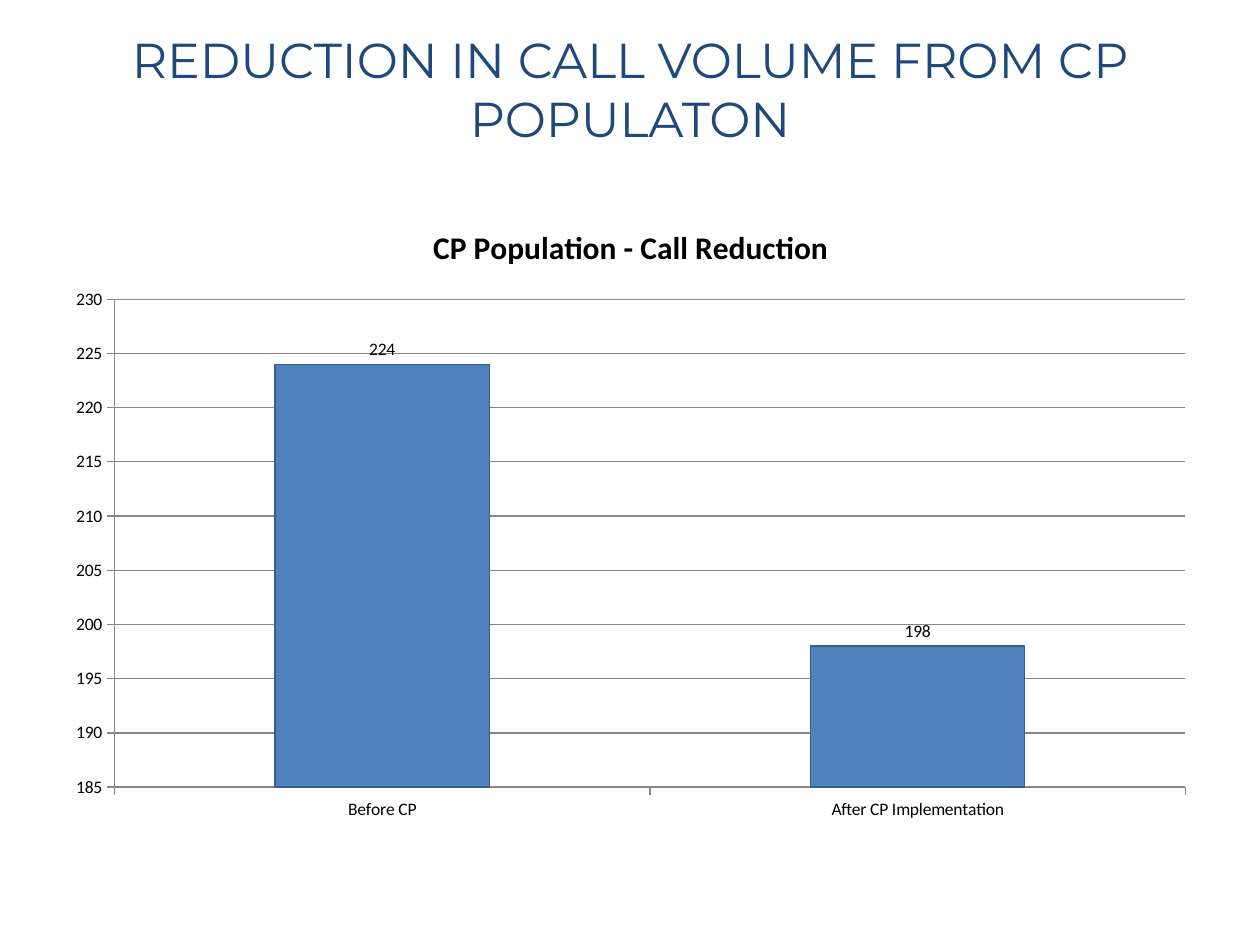
import pptx
import pptx.util
import pptx.chart.data
import pptx.dml.color
import pptx.enum.chart
import pptx.enum.text

Cm, Pt = pptx.util.Cm, pptx.util.Pt
enum = pptx.enum.chart


def tint(code):
    return pptx.dml.color.RGBColor.from_string(code)


def write(frame, text, size, color, face, bold=False):
    frame.text = text
    para = frame.paragraphs[0]
    para.alignment = pptx.enum.text.PP_ALIGN.CENTER
    font = para.runs[0].font
    font.size, font.name, font.bold = Pt(size), face, bold
    font.color.rgb = tint(color)


deck = pptx.Presentation()
deck.slide_width, deck.slide_height = Cm(25.4), Cm(19.05)
slide = deck.slides.add_slide(deck.slide_layouts[5])

# Title
title = slide.shapes.title
title.left, title.top, title.width, title.height = Cm(0.33), Cm(0.2), Cm(24.74), Cm(3.18)
frame = title.text_frame
frame.word_wrap = True
frame.auto_size = pptx.enum.text.MSO_AUTO_SIZE.NONE
frame.vertical_anchor = pptx.enum.text.MSO_ANCHOR.MIDDLE
frame.margin_left = frame.margin_right = Cm(0.2)
frame.margin_top = frame.margin_bottom = Cm(0.1)
write(frame, "REDUCTION IN CALL VOLUME FROM CP POPULATON", 28, "1F497D", "Montserrat")

# Call counts
data = pptx.chart.data.CategoryChartData()
data.categories = ["Before CP", "After CP Implementation"]
data.add_series("Series 1", [224, 198])
chart = slide.shapes.add_chart(
    enum.XL_CHART_TYPE.COLUMN_CLUSTERED,
    Cm(1.07), Cm(4.04), Cm(23.29), Cm(12.73), data).chart
chart.font.size, chart.font.name = Pt(10), "Calibri"
chart.font.color.rgb = tint("000000")
chart.has_legend = False
chart.has_title = True
write(chart.chart_title.text_frame, "CP Population - Call Reduction",
      18, "000000", "Calibri", bold=True)
chart.chart_title.include_in_layout = False

# Axes and grid
calls = chart.value_axis
calls.minimum_scale, calls.maximum_scale, calls.major_unit = 185, 230, 5
calls.has_major_gridlines = True
for axis in (chart.category_axis, calls):
    axis.major_tick_mark = enum.XL_TICK_MARK.OUTSIDE
    axis.minor_tick_mark = enum.XL_TICK_MARK.NONE
for line in (chart.category_axis.format.line, calls.format.line,
             calls.major_gridlines.format.line):
    line.color.rgb = tint("878787")
    line.width = Pt(0.75)

# Bars and labels
plot = chart.plots[0]
plot.gap_width = 150
plot.vary_by_categories = False
bars = plot.series[0].format
bars.fill.solid()
bars.fill.fore_color.rgb = tint("4F81BD")
bars.line.color.rgb = tint("385D8A")
bars.line.width = Pt(0.75)
labels = plot.series[0].data_labels
labels.show_value = True
labels.position = enum.XL_LABEL_POSITION.OUTSIDE_END

deck.save("out.pptx")
